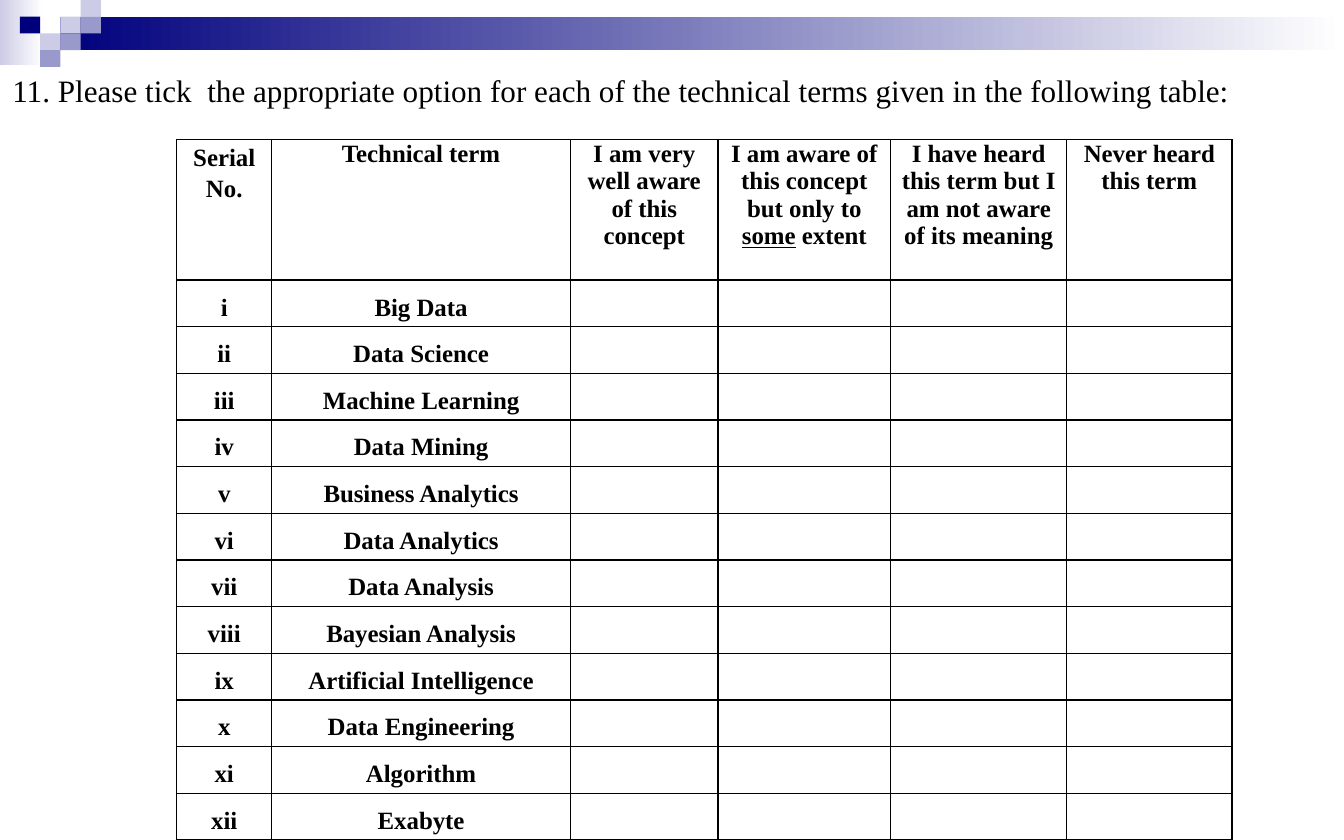
from dataclasses import dataclass

from lxml.etree import SubElement
from pptx import Presentation
from pptx.dml.color import RGBColor as Rgb
from pptx.enum.shapes import MSO_SHAPE as Shape
from pptx.enum.text import PP_ALIGN as Align
from pptx.oxml.ns import qn
from pptx.util import Cm, Pt


@dataclass(frozen=True)
class Theme:
    font: str = "Times New Roman"
    ink: str = "000000"
    navy: str = "00007D"
    mid: str = "9999CC"
    pale: str = "CCCCE6"
    white: str = "FFFFFF"
    ask: int = 20
    cell: int = 16
    rule: int = 1


@dataclass(frozen=True)
class Block:
    """A filled bar or tile, in cm; fade is the end colour of a gradient."""
    left: float
    top: float
    width: float
    height: float
    color: str
    fade: str = ""


@dataclass(frozen=True)
class Run:
    text: str
    under: bool = False


@dataclass(frozen=True)
class Head:
    width: float
    runs: tuple[Run, ...]
    lead: float = 1.0


THEME = Theme()
STEP_X, STEP_Y, EDGE = 0.46, 0.38, 0.45

BARS = (
    Block(0, 0, 0.97, 1.47, THEME.pale, THEME.white),
    Block(1.37, 0.38, 29.11, 0.76, THEME.navy, THEME.white),
)
# Column, row and colour of each tile in the corner grid
TILES = (
    (2, 1, THEME.pale), (3, 0, THEME.pale), (3, 1, THEME.mid),
    (1, 2, THEME.pale), (0, 1, THEME.navy), (2, 2, THEME.mid),
    (1, 3, THEME.mid),
)

ASK = ("11. Please tick  the appropriate option for each of the "
       "technical terms given in the following table:")
HEADS = (
    Head(2.15, (Run("Serial No."),), 1.15),
    Head(6.78, (Run("Technical term"),)),
    Head(3.34, (Run("I am very well aware of this concept"),)),
    Head(3.92, (Run("I am aware of this concept but only to "),
                Run("some", True), Run(" extent"))),
    Head(3.99, (Run("I have heard this term but I am not aware "
                    "of its meaning"),)),
    Head(3.75, (Run("Never heard this term"),)),
)
TERMS = (
    ("i", "Big Data"), ("ii", "Data Science"), ("iii", "Machine Learning"),
    ("iv", "Data Mining"), ("v", "Business Analytics"),
    ("vi", "Data Analytics"), ("vii", "Data Analysis"),
    ("viii", "Bayesian Analysis"), ("ix", "Artificial Intelligence"),
    ("x", "Data Engineering"), ("xi", "Algorithm"), ("xii", "Exabyte"),
)
HEAD_H, BODY_H = 3.18, 12.7


def draw_block(slide, block: Block) -> None:
    shape = slide.shapes.add_shape(
        Shape.RECTANGLE, Cm(block.left), Cm(block.top),
        Cm(block.width), Cm(block.height))
    shape.shadow.inherit = False
    shape.line.fill.background()
    fill = shape.fill
    if block.fade:
        fill.gradient()
        fill.gradient_angle = 0
        for stop, color in zip(fill.gradient_stops, (block.color, block.fade)):
            stop.color.rgb = Rgb.from_string(color)
    else:
        fill.solid()
        fill.fore_color.rgb = Rgb.from_string(block.color)


def add_run(para, run: Run, size: int, bold: bool = False) -> None:
    item = para.add_run()
    item.text = run.text
    font = item.font
    font.name, font.size, font.bold = THEME.font, Pt(size), bold
    font.color.rgb = Rgb.from_string(THEME.ink)
    if run.under:
        font.underline = True


def draw_ask(slide) -> None:
    box = slide.shapes.add_textbox(Cm(0), Cm(1.47), Cm(28.96), Cm(1.3))
    frame = box.text_frame
    frame.word_wrap = True
    frame.margin_left = frame.margin_right = Cm(0.28)
    frame.margin_top = frame.margin_bottom = Cm(0.15)
    para = frame.paragraphs[0]
    para.space_before = Pt(4)
    add_run(para, Run(ASK), THEME.ask)


def style_cell(cell) -> None:
    """Rule all four sides, clear the fill and tighten the margins."""
    props = cell._tc.get_or_add_tcPr()
    for side in ("lnL", "lnR", "lnT", "lnB"):
        line = SubElement(props, qn(f"a:{side}"), w=str(Pt(THEME.rule)))
        paint = SubElement(line, qn("a:solidFill"))
        SubElement(paint, qn("a:srgbClr"), val=THEME.ink)
    cell.fill.background()
    cell.margin_left = cell.margin_right = Cm(0.13)
    cell.margin_top = cell.margin_bottom = Cm(0)


def fill_cell(cell, runs: tuple[Run, ...], lead: float) -> None:
    para = cell.text_frame.paragraphs[0]
    para.alignment = Align.CENTER
    para.line_spacing = lead
    for run in runs:
        add_run(para, run, THEME.cell, bold=True)


def draw_table(slide) -> None:
    width = sum(head.width for head in HEADS)
    table = slide.shapes.add_table(
        len(TERMS) + 1, len(HEADS), Cm(4.01), Cm(3.17),
        Cm(width), Cm(HEAD_H + BODY_H)).table
    table.first_row = table.horz_banding = False
    for cell in table.iter_cells():
        style_cell(cell)
    table.rows[0].height = Cm(HEAD_H)
    for col, head in enumerate(HEADS):
        table.columns[col].width = Cm(head.width)
        fill_cell(table.cell(0, col), head.runs, head.lead)
    for row, pair in enumerate(TERMS, 1):
        table.rows[row].height = Cm(BODY_H / len(TERMS))
        for col, text in enumerate(pair):
            fill_cell(table.cell(row, col), (Run(text),), 1.5)


def main() -> None:
    deck = Presentation()
    deck.slide_width, deck.slide_height = Cm(30.48), Cm(19.05)
    slide = deck.slides.add_slide(deck.slide_layouts[6])
    tiles = [Block(EDGE + col * STEP_X, row * STEP_Y, STEP_X, STEP_Y, color)
             for col, row, color in TILES]
    for block in (*BARS, *tiles):
        draw_block(slide, block)
    draw_ask(slide)
    draw_table(slide)
    deck.save("out.pptx")


if __name__ == "__main__":
    main()
